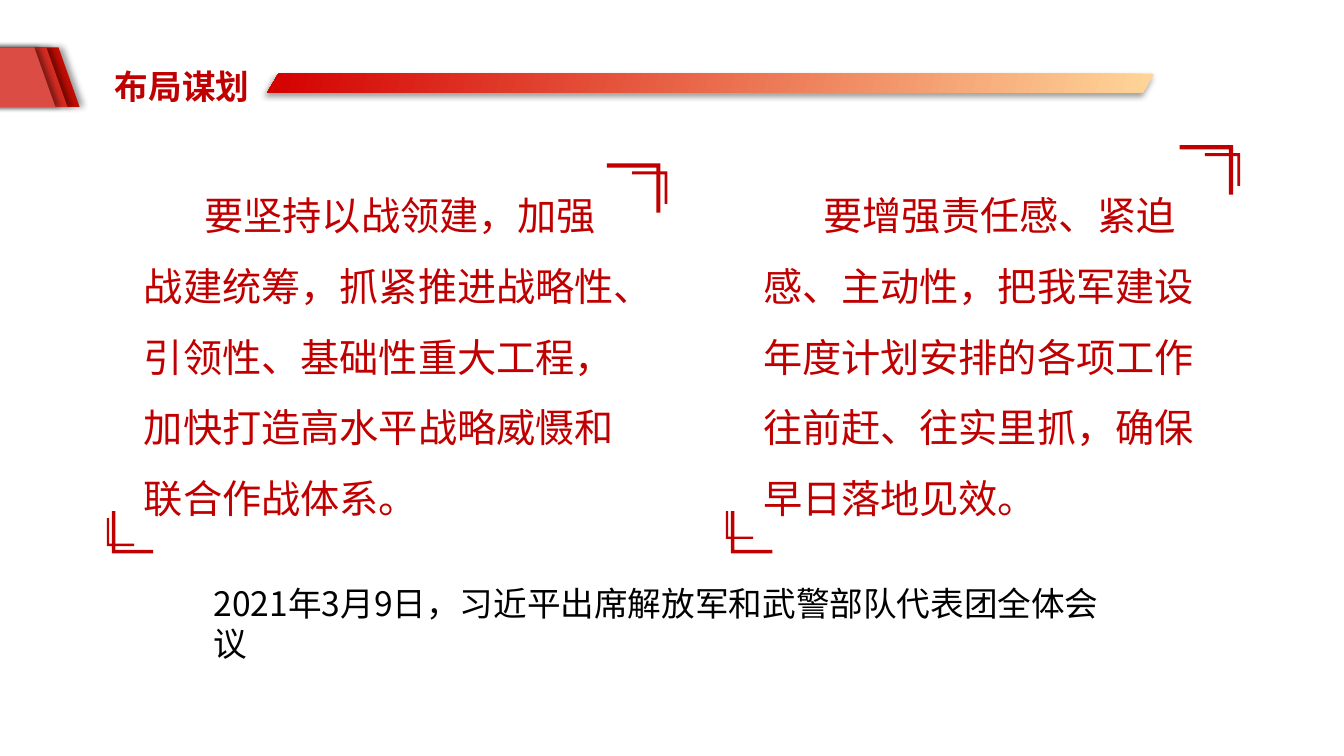
"""Builds the planning slide with two bracketed statements and a caption."""
from lxml import etree
from pptx import Presentation
from pptx.dml.color import RGBColor
from pptx.enum.shapes import MSO_SHAPE
from pptx.enum.text import MSO_ANCHOR, MSO_AUTO_SIZE, PP_ALIGN
from pptx.oxml.ns import qn
from pptx.util import Inches, Pt

CORNER, SLANT = MSO_SHAPE.CORNER, MSO_SHAPE.PARALLELOGRAM
TOP, LEFT = MSO_ANCHOR.TOP, PP_ALIGN.LEFT
GROW, FIXED = MSO_AUTO_SIZE.SHAPE_TO_FIT_TEXT, MSO_AUTO_SIZE.NONE

FONT = "Noto Sans CJK SC"
COLORS = {"red": "C00000", "ink": "000000", "shadow": "000000",
          "bar_start": "FFD699", "bar_end": "D40000"}

TITLE = "布局谋划"
CAPTION = "2021年3月9日，习近平出席解放军和武警部队代表团全体会议"
STATEMENTS = [
    {"text": "要坚持以战领建，加强战建统筹，抓紧推进战略性、引领性、基础性重大工程，加快打造高水平战略威慑和联合作战体系。",
     "left": 1.33, "width": 4.96, "top_bracket": (6.02, 1.62), "low_inner_drop": 0.07},
    {"text": "要增强责任感、紧迫感、主动性，把我军建设年度计划安排的各项工作往前赶、往实里抓，确保早日落地见效。",
     "left": 7.47, "width": 4.56, "top_bracket": (11.7, 1.44), "low_inner_drop": 0},
]
RIBBONS = [("C10D04", 5), ("D42B22", 4), ("DB4C44", 4)]

SLIDE_W, SLIDE_H = 13.33, 7.5
STATEMENT_TOP, STATEMENT_H = 1.62, 3.63
RIBBON_LEFT, RIBBON_STEP = -0.55, 0.12
TOP_BRACKET, LOW_BRACKET = (0.53, 0.49), (0.41, 0.42)
LOW_BRACKET_SHIFT, LOW_BRACKET_TOP = 0.22, 5.07
INNER_SCALE = 0.66


def write(box, text, size, color="red", bold=False, spacing=1.0, indent=0, fit=GROW):
    """Fill a text box or placeholder with one formatted paragraph."""
    frame = box.text_frame
    frame.word_wrap = True
    frame.auto_size = fit
    frame.vertical_anchor = TOP
    paragraph = frame.paragraphs[0]
    paragraph.alignment = LEFT
    paragraph.line_spacing = spacing
    paragraph.space_before = Pt(0)
    if indent:
        paragraph._p.get_or_add_pPr().set("indent", str(Inches(indent)))
    run = paragraph.add_run()
    run.text = text
    run.font.size = Pt(size)
    run.font.bold = bold
    run.font.name = FONT
    run.font.color.rgb = RGBColor.from_string(COLORS[color])
    etree.SubElement(run.font._element, qn("a:ea")).set("typeface", FONT)


def add_text(slide, bounds, text, **style):
    write(slide.shapes.add_textbox(*map(Inches, bounds)), text, **style)


def add_figure(slide, kind, bounds, adjustments, color=None):
    figure = slide.shapes.add_shape(kind, *map(Inches, bounds))
    for index, value in enumerate(adjustments):
        figure.adjustments[index] = value
    figure.line.fill.background()
    figure.shadow.inherit = False
    if color:
        figure.fill.solid()
        figure.fill.fore_color.rgb = RGBColor.from_string(color)
    return figure


def cast_shadow(figure, blur, distance, angle):
    effects = figure._element.spPr.find(qn("a:effectLst"))
    shadow = etree.SubElement(effects, qn("a:outerShdw"), blurRad=str(Pt(blur)),
                              dist=str(Pt(distance)), dir=str(angle * 60000),
                              algn="ctr", rotWithShape="0")
    tint = etree.SubElement(shadow, qn("a:srgbClr"), val=COLORS["shadow"])
    etree.SubElement(tint, qn("a:alpha"), val="40000")


def add_bracket(slide, corner, size, inner_shift, rotation=0):
    """Draw a large corner and a smaller one shifted from it."""
    for shift, scale in (((0, 0), 1), (inner_shift, INNER_SCALE)):
        bounds = (corner[0] + shift[0], corner[1] + shift[1],
                  size[0] * scale, size[1] * scale)
        add_figure(slide, CORNER, bounds, (0.088, 0.084), COLORS["red"]).rotation = rotation


def add_header(slide):
    for index, (color, blur) in enumerate(RIBBONS):
        bounds = (RIBBON_LEFT - index * RIBBON_STEP, 0.47, 1.34, 0.59)
        ribbon = add_figure(slide, SLANT, bounds, (0.355,), color)
        ribbon._element.spPr.xfrm.set("flipH", "1")
        cast_shadow(ribbon, blur, 3, 0)

    title = slide.shapes.title
    title.left, title.top, title.width, title.height = map(Inches, (1.04, 0.4, 1.87, 0.71))
    write(title, TITLE, size=24, bold=True, spacing=1.5, fit=FIXED)

    bar = add_figure(slide, SLANT, (2.65, 0.73, 8.8, 0.19), (0.589,))
    bar.fill.gradient()
    bar.fill.gradient_angle = 360 - 197
    for stop, name in zip(bar.fill.gradient_stops, ("bar_start", "bar_end")):
        stop.color.rgb = RGBColor.from_string(COLORS[name])
    cast_shadow(bar, 4, 3, 135)


def add_statement(slide, statement):
    left = statement["left"]
    add_bracket(slide, statement["top_bracket"], TOP_BRACKET, (0.25, 0.08), 180)
    add_bracket(slide, (left - LOW_BRACKET_SHIFT, LOW_BRACKET_TOP), LOW_BRACKET,
                (-0.05, statement["low_inner_drop"]))
    add_text(slide, (left, STATEMENT_TOP, statement["width"], STATEMENT_H),
             statement["text"], size=28, spacing=1.5, indent=0.6)


def main():
    deck = Presentation()
    deck.slide_width, deck.slide_height = Inches(SLIDE_W), Inches(SLIDE_H)
    slide = deck.slides.add_slide(deck.slide_layouts.get_by_name("Title Only"))
    add_header(slide)
    for statement in STATEMENTS:
        add_statement(slide, statement)
    add_text(slide, (2.02, 5.73, 9.3, 0.5), CAPTION, size=24, color="ink")
    deck.save("out.pptx")


if __name__ == "__main__":
    main()
